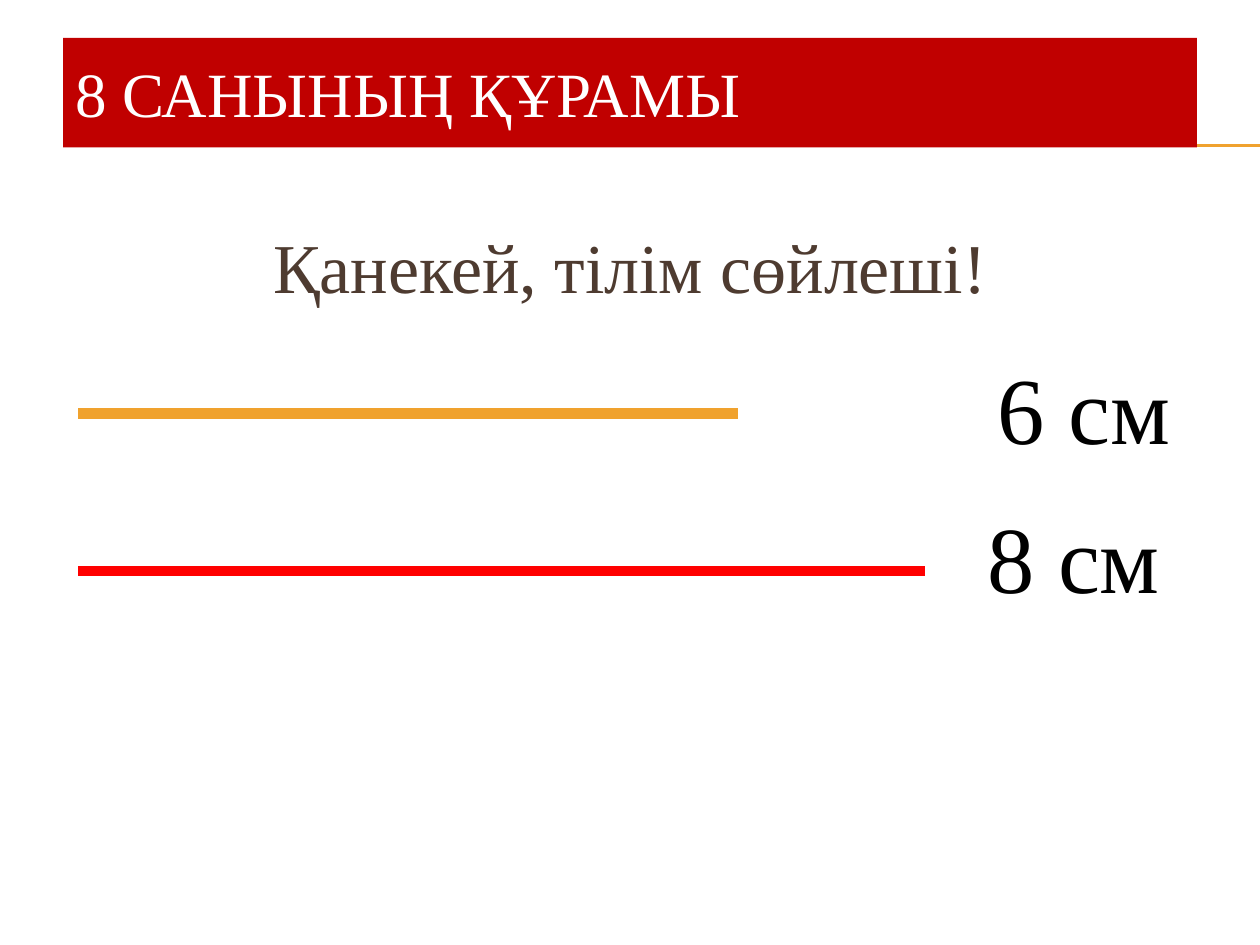
from lxml.etree import SubElement
from pptx import Presentation
from pptx.dml.color import RGBColor
from pptx.enum.shapes import MSO_CONNECTOR
from pptx.enum.text import MSO_ANCHOR, PP_ALIGN
from pptx.oxml.ns import qn
from pptx.util import Pt

PX = 9144  # EMU per px, 100 px to the inch
WHITE = RGBColor(0xFF, 0xFF, 0xFF)
BLACK = RGBColor(0x00, 0x00, 0x00)
BROWN = RGBColor(0x4E, 0x3B, 0x30)
CRIMSON = RGBColor(0xC0, 0x00, 0x00)
RED = RGBColor(0xFF, 0x00, 0x00)
AMBER = RGBColor(0xF0, 0xA2, 0x2E)


class SlideBuilder:
    font_name = "Times New Roman"

    def __init__(self, slide):
        self.slide = slide

    def set_text(self, frame, text, size, color, align):
        """Fill the frame with one formatted paragraph and return it."""
        frame.text = text
        frame.word_wrap = True
        paragraph = frame.paragraphs[0]
        paragraph.alignment = align
        paragraph.space_before = Pt(0)
        font = paragraph.runs[0].font
        font.name, font.size = self.font_name, Pt(size)
        font.color.rgb = color
        return paragraph

    def place(self, shape, left, top, width, height):
        shape.left, shape.top = left * PX, top * PX
        shape.width, shape.height = width * PX, height * PX

    def title(self, text, *box):
        heading = self.slide.shapes.title
        self.place(heading, *box)
        heading.fill.solid()
        heading.fill.fore_color.rgb = CRIMSON
        heading.text_frame.vertical_anchor = MSO_ANCHOR.MIDDLE
        self.set_text(heading.text_frame, text, 36, WHITE, PP_ALIGN.LEFT)
        return heading

    def body(self, text, *box):
        phrase = self.slide.placeholders[1]
        self.place(phrase, *box)
        paragraph = self.set_text(phrase.text_frame, text, 40, BROWN, PP_ALIGN.CENTER)
        properties = paragraph._p.get_or_add_pPr()
        properties.set("marL", "0")
        properties.set("indent", "0")
        SubElement(properties, qn("a:buNone"))

    def label(self, text, *box):
        measure = self.slide.shapes.add_textbox(*(length * PX for length in box))
        self.set_text(measure.text_frame, text, 54, BLACK, PP_ALIGN.CENTER)

    def line(self, left, right, y, color, weight):
        segment = self.slide.shapes.add_connector(
            MSO_CONNECTOR.STRAIGHT, left * PX, y * PX, right * PX, y * PX)
        segment.line.color.rgb = color
        segment.line.width = Pt(weight)
        SubElement(segment.element.spPr, qn("a:effectLst"))
        return segment


def main():
    deck = Presentation()
    deck.slide_width, deck.slide_height = 1000 * PX, 750 * PX
    builder = SlideBuilder(deck.slides.add_slide(deck.slide_layouts[1]))

    heading = builder.title("8 САНЫНЫҢ ҚҰРАМЫ", 50, 30, 900, 87)
    for y in (115, 116):
        rule = builder.line(56, 1000, y, AMBER, 0.75)
        heading.element.addprevious(rule.element)  # keeps the rule behind the title

    builder.body("Қанекей, тілім сөйлеші!", 50, 172, 900, 498)
    builder.line(62, 586, 328, AMBER, 6)
    builder.line(62, 734, 453, RED, 6)
    builder.label("6 см", 766, 273, 188, 101)
    builder.label("8 см", 758, 391, 188, 101)
    deck.save("out.pptx")


if __name__ == "__main__":
    main()
